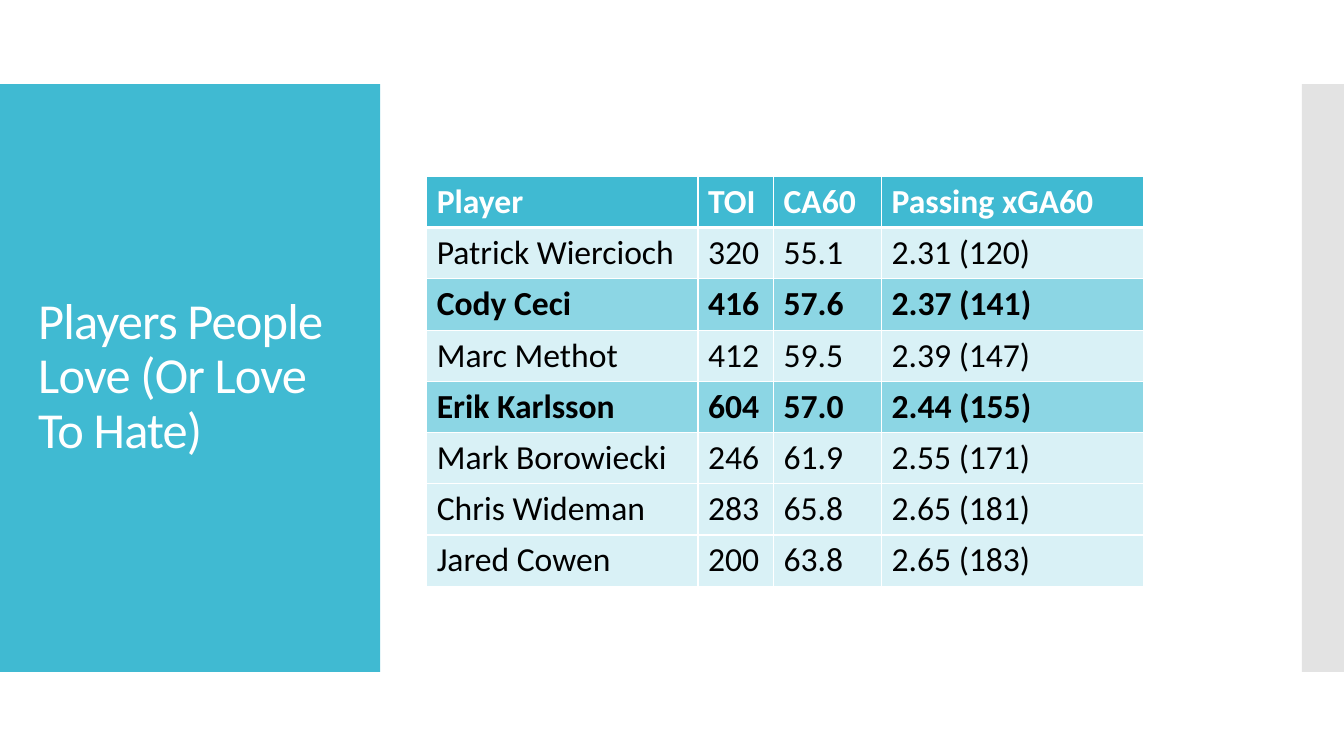
"""Build a slide with a side title and a table of player results."""
from lxml import etree
from pptx import Presentation
from pptx import util as u
from pptx.dml import color
from pptx.enum import shapes, text
from pptx.oxml import ns

TEAL, PALE, MID, GREY = "40BAD2", "D9F1F6", "8CD6E4", "C8C8C8"
WHITE, BLACK = "FFFFFF", "000000"
HEAD = ("Player", "TOI", "CA60", "Passing xGA60")
STARS = ("Cody Ceci", "Erik Karlsson")
ROWS = [
    ("Patrick Wiercioch", "320", "55.1", "2.31 (120)"),
    ("Cody Ceci", "416", "57.6", "2.37 (141)"),
    ("Marc Methot", "412", "59.5", "2.39 (147)"),
    ("Erik Karlsson", "604", "57.0", "2.44 (155)"),
    ("Mark Borowiecki", "246", "61.9", "2.55 (171)"),
    ("Chris Wideman", "283", "65.8", "2.65 (181)"),
    ("Jared Cowen", "200", "63.8", "2.65 (183)"),
]


def rgb(code):
    """Turn a hex string into a colour."""
    return color.RGBColor.from_string(code)


def sub(node, tag, **attrs):
    """Add a child element in the drawing namespace."""
    return etree.SubElement(node, ns.qn(tag), attrs)


class Deck:
    """Hold the style and the slide, laid out on 32 columns by 18 rows."""

    font = "Calibri"

    def __init__(self):
        """Open a wide deck with one titled slide."""
        self.prs = Presentation()
        self.prs.slide_width = u.Inches(13.33)
        self.prs.slide_height = u.Inches(7.5)
        self.slide = self.prs.slides.add_slide(self.prs.slide_layouts[5])

    def col(self, n):
        """Give the length of n columns."""
        return round(self.prs.slide_width * n / 32)

    def row(self, n):
        """Give the length of n rows."""
        return round(self.prs.slide_height * n / 18)

    def box(self, x, y, w, h):
        """Give a place in slide lengths."""
        return self.col(x), self.row(y), self.col(w), self.row(h)

    def run(self, para, words, size, ink, bold=False):
        """Add a styled run."""
        run = para.add_run()
        run.text = words
        run.font.name, run.font.size, run.font.bold = self.font, u.Pt(size), bold
        run.font.color.rgb = rgb(ink)
        return run

    def panel(self, place, fill, alpha=100):
        """Draw a plain rectangle."""
        kind = shapes.MSO_SHAPE.RECTANGLE
        shape = self.slide.shapes.add_shape(kind, *self.box(*place))
        shape.shadow.inherit = False
        shape.fill.solid()
        shape.fill.fore_color.rgb = rgb(fill)
        shape.line.fill.background()
        if alpha < 100:
            tint = shape._element.spPr.find(".//" + ns.qn("a:srgbClr"))
            sub(tint, "a:alpha", val=str(alpha * 1000))

    def title(self, place, words):
        """Set the title in front of the panels."""
        title = self.slide.shapes.title
        title.left, title.top, title.width, title.height = self.box(*place)
        self.slide.shapes._spTree.append(title._element)
        frame = title.text_frame
        frame.word_wrap = True
        frame.auto_size = text.MSO_AUTO_SIZE.NONE
        frame.vertical_anchor = text.MSO_ANCHOR.MIDDLE
        para = frame.paragraphs[0]
        para.alignment = text.PP_ALIGN.LEFT
        para.line_spacing = 0.9
        run = self.run(para, words, 36, WHITE)
        run.font._element.set("spc", "-60")

    def cell(self, cell, words, fill, ink, bold, edges):
        """Fill one table cell and rule its edges."""
        self.run(cell.text_frame.paragraphs[0], words, 24, ink, bold)
        props = cell._tc.get_or_add_tcPr()
        for side, width in zip("LRTB", edges):
            line = sub(props, "a:ln" + side, w=str(u.Pt(width)))
            sub(sub(line, "a:solidFill"), "a:srgbClr", val=WHITE)
        cell.fill.solid()
        cell.fill.fore_color.rgb = rgb(fill)

    def table(self, x, y, widths, high, head, rows):
        """Draw a table with a heading row and marked rows."""
        place = self.box(x, y, sum(widths), high * (len(rows) + 1))
        grid = self.slide.shapes.add_table(len(rows) + 1, len(head), *place).table
        for col, wide in zip(grid.columns, widths):
            col.width = self.col(wide)
        for i, vals in enumerate([head, *rows]):
            grid.rows[i].height = self.row(high)
            star = vals[0] in STARS
            fill = TEAL if i == 0 else MID if star else PALE
            ink = BLACK if i else WHITE
            edges = (1, 1, 3 if i == 1 else 1, 1 if i else 3)
            for j, words in enumerate(vals):
                self.cell(grid.cell(i, j), words, fill, ink, star or i == 0, edges)


def main():
    """Lay out the slide and save it."""
    deck = Deck()
    deck.panel((0, 2, 9.05, 14), TEAL)
    deck.panel((31, 2, 1, 14), GREY, 50)
    deck.title((0.67, 2.95, 7.73, 12.07), "Players People Love (Or Love To Hate)")
    deck.table(10.16, 4.2, (6.46, 1.8, 2.57, 6.25), 1.22, HEAD, ROWS)
    deck.prs.save("out.pptx")


if __name__ == "__main__":
    main()
